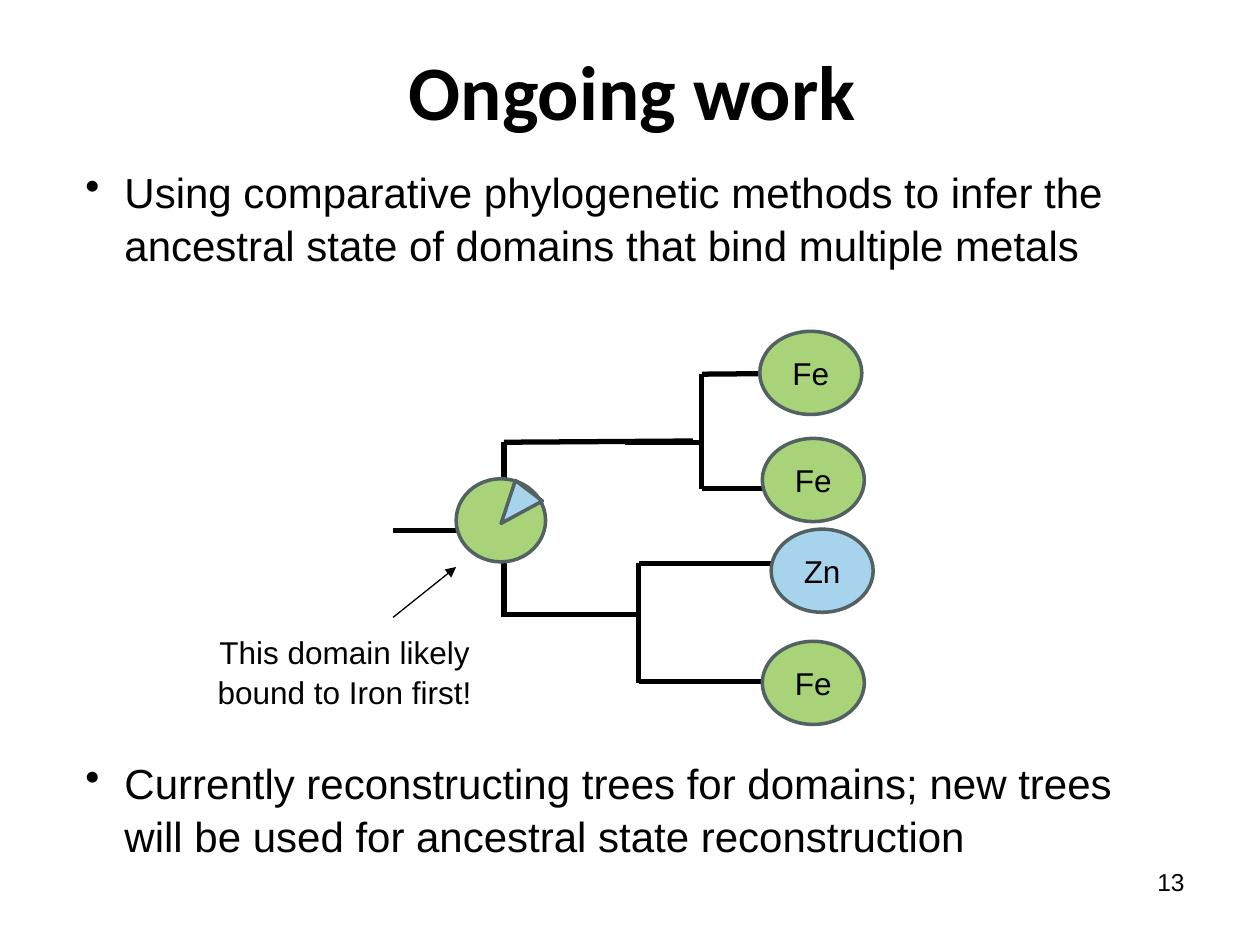
from lxml import etree
from pptx import Presentation
from pptx import util as u
from pptx.dml.color import RGBColor
from pptx.enum import shapes, text
from pptx.oxml import ns

BLACK = RGBColor(0x00, 0x00, 0x00)
OUTLINE = RGBColor(0x52, 0x62, 0x63)
IRON = RGBColor(0xA8, 0xD3, 0x79)
ZINC = RGBColor(0xA7, 0xD4, 0xEC)
LEFT, CENTER, RIGHT = text.PP_ALIGN.LEFT, text.PP_ALIGN.CENTER, text.PP_ALIGN.RIGHT
TOP, MIDDLE = text.MSO_ANCHOR.TOP, text.MSO_ANCHOR.MIDDLE

BRANCHES = [
    (3.12, 4.21, 4, 4.21),
    (4, 3.51, 4, 4.21),
    (4, 4.21, 4, 4.9),
    (4.96, 4.88, 4, 4.88),
    (5.5, 3.5, 4, 3.51),
    (4.46, 4.88, 5.07, 4.88),
    (5.07, 4.47, 5.07, 4.88),
    (5.07, 4.88, 5.07, 5.42),
    (6.38, 5.41, 5.07, 5.41),
    (6.38, 4.47, 5.07, 4.47),
    (4.96, 3.51, 5.57, 3.51),
    (5.57, 2.97, 5.57, 3.51),
    (5.57, 3.51, 5.57, 3.88),
    (6.33, 3.88, 5.57, 3.88),
    (6.69, 2.96, 5.57, 2.97),
]
LEAVES = [
    ("Fe", 6.03, 2.63, IRON),
    ("Fe", 6.05, 3.48, IRON),
    ("Fe", 6.05, 5.09, IRON),
    ("Zn", 6.12, 4.2, ZINC),
]
BULLETS = [
    (1.25, "Using comparative phylogenetic methods to infer the "
           "ancestral state of domains that bind multiple metals"),
    (5.94, "Currently reconstructing trees for domains; new trees "
           "will be used for ancestral state reconstruction"),
]


def write(frame, words, size=18, font="Arial", bold=False, align=LEFT, anchor=TOP,
          spacing=None, margin=0, indent=0, bullet=None):
    frame.word_wrap = True
    frame.vertical_anchor = anchor
    para = frame.paragraphs[0]
    para.alignment = align
    if spacing:
        para.line_spacing = spacing
    properties = para._p.get_or_add_pPr()
    properties.set("marL", str(u.Inches(margin)))
    properties.set("indent", str(u.Inches(indent)))
    if bullet:
        etree.SubElement(properties, ns.qn("a:buChar")).set("char", bullet)
    span = para.add_run()
    span.text = words
    span.font.size = u.Pt(size)
    span.font.name = font
    span.font.bold = bold
    span.font.color.rgb = BLACK


class Sketch:
    def __init__(self, page, outline=OUTLINE, outline_width=2):
        self.page = page
        self.outline = outline
        self.outline_width = outline_width

    def label(self, left, top, width, height, words, **style):
        box = self.page.shapes.add_textbox(*map(u.Inches, (left, top, width, height)))
        write(box.text_frame, words, **style)

    def shape(self, kind, left, top, width, height, fill):
        shape = self.page.shapes.add_shape(kind, *map(u.Inches, (left, top, width, height)))
        shape.shadow.inherit = False
        shape.fill.solid()
        shape.fill.fore_color.rgb = fill
        shape.line.color.rgb = self.outline
        shape.line.width = u.Pt(self.outline_width)
        return shape

    def line(self, ends, width, parent=None, arrow=False):
        parent = parent or self.page
        line = parent.shapes.add_connector(
            shapes.MSO_CONNECTOR.STRAIGHT, *map(u.Inches, ends))
        line.line.color.rgb = BLACK
        line.line.width = u.Pt(width)
        if arrow:
            stroke = line.line._get_or_add_ln()
            etree.SubElement(stroke, ns.qn("a:tailEnd")).set("type", "triangle")
        etree.SubElement(line._element.spPr, ns.qn("a:effectLst"))


def main():
    deck = Presentation()
    deck.slide_width, deck.slide_height = u.Inches(10), u.Inches(7.5)
    page = deck.slides.add_slide(deck.slide_layouts[6])
    sketch = Sketch(page)
    oval = shapes.MSO_SHAPE.OVAL

    sketch.label(0.48, 0.17, 9.08, 1.08, "Ongoing work", size=44, font="Calibri",
                 bold=True, align=CENTER, anchor=MIDDLE)
    for top, words in BULLETS:
        sketch.label(0.58, top, 8.83, 0.91, words, size=24, spacing=1.05,
                     margin=0.31, indent=-0.31, bullet="•")

    tree = page.shapes.add_group_shape()
    for ends in BRANCHES:
        sketch.line(ends, 3, parent=tree)
    for metal, left, top, fill in LEAVES:
        leaf = sketch.shape(oval, left, top, 0.81, 0.66, fill)
        write(leaf.text_frame, metal, align=CENTER, anchor=MIDDLE)

    sketch.line((3.12, 4.9, 3.62, 4.5), 0.75, arrow=True)
    sketch.label(1.01, 4.96, 2.95, 0.71, "This domain likely bound to Iron first!",
                 align=CENTER, spacing=1.05, margin=0.5)

    sketch.shape(oval, 3.62, 3.8, 0.71, 0.66, IRON)
    wedge = sketch.shape(shapes.MSO_SHAPE.ISOSCELES_TRIANGLE, 3.96, 3.86, 0.27, 0.34, ZINC)
    wedge.adjustments[0] = 0.57
    wedge.rotation = 217.2

    sketch.label(7.17, 6.83, 2.33, 0.52, "13", size=14, align=RIGHT)
    deck.save("out.pptx")


if __name__ == "__main__":
    main()
